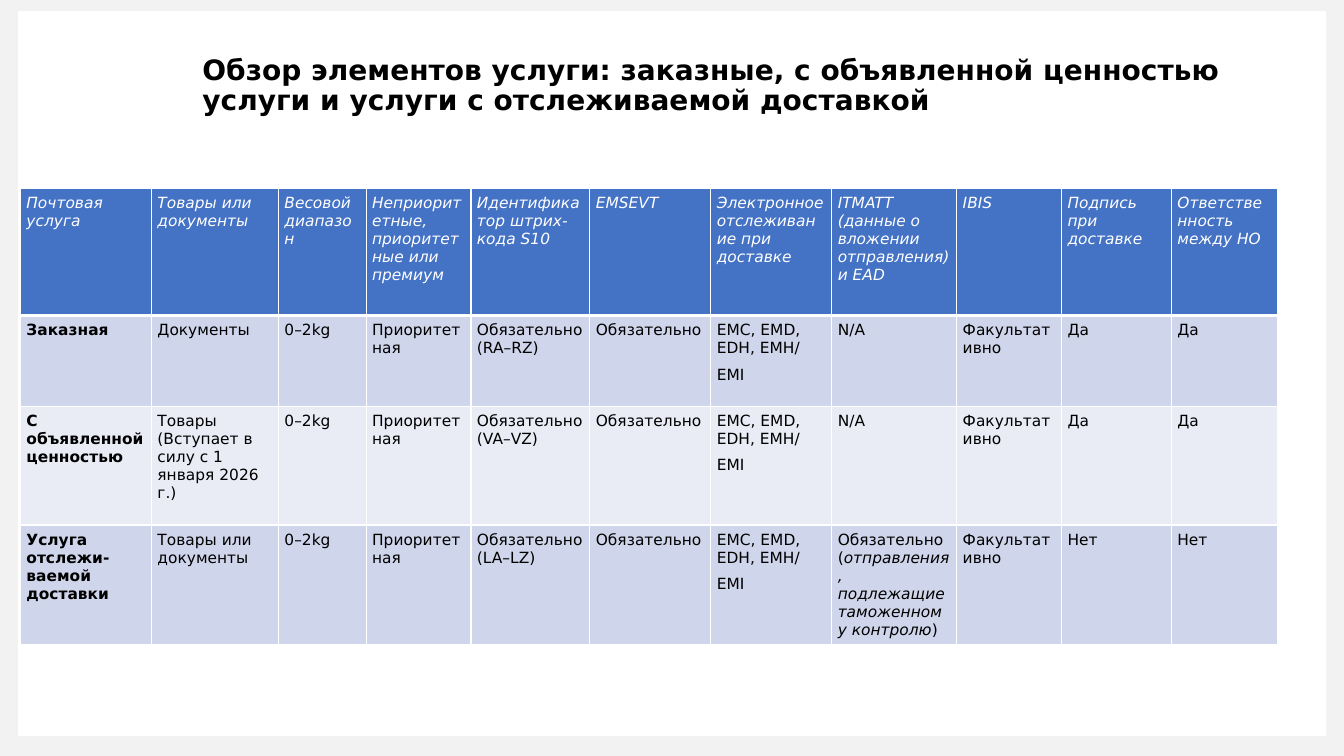
from lxml.etree import SubElement, Element
from pptx import Presentation
from pptx.dml.color import RGBColor
from pptx.enum.shapes import MSO_SHAPE as Shape
from pptx.enum.text import MSO_ANCHOR as Anchor
from pptx.oxml.ns import qn
from pptx.util import Pt

FONT = "DejaVu Sans"
WHITE, BLACK, FRAME = "FFFFFF", "000000", "F2F2F2"
HEADER_FILL, BAND_FILLS = "4472C4", ("CFD5EA", "E9EBF5")
INSET, SPACING = 4.3, 3
TITLE = ("Обзор элементов услуги: заказные, с объявленной ценностью "
         "услуги и услуги с отслеживаемой доставкой")
COLUMN_WIDTHS = (93.6, 90.72, 62.64, 74.88, 84.96, 86.4, 86.4, 89.28, 74.88, 78.48, 75.6)
ROW_HEIGHTS = (90.72, 64.8, 84.96, 84.96)
HEADINGS = (
    "Почтовая услуга", "Товары или документы", "Весовой диапазон",
    "Неприоритетные, приоритетные или премиум", "Идентификатор штрих-кода S10",
    "EMSEVT", "Электронное отслеживание при доставке",
    "ITMATT (данные о вложении отправления) и EAD", "IBIS",
    "Подпись при доставке", "Ответственность между НО",
)
CUSTOMS = "Обязательно (|отправления, подлежащие таможенному контролю|)"
SERVICES = (
    ("Заказная", "Документы", "RA–RZ", "N/A", "Да"),
    ("С объявленной ценностью", "Товары (Вступает в силу с 1 января 2026 г.)",
     "VA–VZ", "N/A", "Да"),
    ("Услуга отслежи-ваемой доставки", "Товары или документы", "LA–LZ", CUSTOMS, "Нет"),
)


def color(value):
    """Turn a hex string into a colour."""
    return RGBColor.from_string(value)


def service_row(name, contents, codes, customs_data, answer):
    """Give the cell texts of one service."""
    return (name, contents, "0–2kg", "Приоритетная", f"Обязательно ({codes})",
            "Обязательно", "EMC, EMD, EDH, EMH/\nEMI", customs_data,
            "Факультативно", answer, answer)


def format_run(run, size, hex_color, bold=False, italic=False):
    """Set the font of a run."""
    font = run.font
    font.name, font.size = FONT, Pt(size)
    font.bold, font.italic = bold, italic
    font.color.rgb = color(hex_color)


def add_panel(slide, left, top, width, height, fill):
    """Add a plain rectangle without outline."""
    panel = slide.shapes.add_shape(
        Shape.RECTANGLE, Pt(left), Pt(top), Pt(width), Pt(height))
    panel.shadow.inherit = False
    panel.fill.solid()
    panel.fill.fore_color.rgb = color(fill)
    panel.line.fill.background()


def add_title(slide, left, top, width, height):
    """Add the bold slide title."""
    text_frame = slide.shapes.add_textbox(
        Pt(left), Pt(top), Pt(width), Pt(height)).text_frame
    text_frame.word_wrap = True
    text_frame.vertical_anchor = Anchor.MIDDLE
    text_frame.text = TITLE
    paragraph = text_frame.paragraphs[0]
    paragraph.line_spacing = 0.9
    format_run(paragraph.runs[0], 20, BLACK, bold=True)


def set_borders(cell, bottom_width):
    """Draw white borders around a cell."""
    properties = cell._tc.get_or_add_tcPr()
    widths = {"a:lnL": 1, "a:lnR": 1, "a:lnT": 1, "a:lnB": bottom_width}
    for position, (tag, width) in enumerate(widths.items()):
        line = Element(qn(tag), w=str(Pt(width)))
        fill = SubElement(line, qn("a:solidFill"))
        SubElement(fill, qn("a:srgbClr"), val=WHITE)
        properties.insert(position, line)


def fill_cell(cell, text, fill, is_header, is_name):
    """Write one cell, with parts between bars in italics."""
    cell.fill.solid()
    cell.fill.fore_color.rgb = color(fill)
    set_borders(cell, 3 if is_header else 1)
    cell.margin_left = cell.margin_right = Pt(INSET)
    cell.margin_top = cell.margin_bottom = Pt(INSET)
    text_frame = cell.text_frame
    for number, line in enumerate(text.split("\n")):
        paragraph = text_frame.add_paragraph() if number else text_frame.paragraphs[0]
        paragraph.space_before = Pt(SPACING if number else 0)
        paragraph.space_after = Pt(SPACING)
        for part, words in enumerate(line.split("|")):
            run = paragraph.add_run()
            run.text = words
            format_run(run, 11, WHITE if is_header else BLACK,
                       bold=is_name, italic=is_header or part % 2 == 1)


def add_service_table(slide, left, top):
    """Add the table that compares the postal services."""
    rows = [HEADINGS] + [service_row(*service) for service in SERVICES]
    table = slide.shapes.add_table(
        len(rows), len(HEADINGS), Pt(left), Pt(top),
        Pt(sum(COLUMN_WIDTHS)), Pt(sum(ROW_HEIGHTS))).table
    table.first_row = table.horz_banding = False
    for column, width in zip(table.columns, COLUMN_WIDTHS):
        column.width = Pt(width)
    for row_number, (row, height) in enumerate(zip(rows, ROW_HEIGHTS)):
        table.rows[row_number].height = Pt(height)
        is_header = row_number == 0
        fill = HEADER_FILL if is_header else BAND_FILLS[(row_number - 1) % 2]
        for column_number, text in enumerate(row):
            fill_cell(table.cell(row_number, column_number), text, fill,
                      is_header, column_number == 0 and not is_header)


def main():
    """Build and save the presentation."""
    presentation = Presentation()
    presentation.slide_width, presentation.slide_height = Pt(960), Pt(540)
    slide = presentation.slides.add_slide(presentation.slide_layouts[6])
    add_panel(slide, 0, 0, 960, 540, FRAME)
    add_panel(slide, 12.96, 7.92, 934.3, 517.7, WHITE)
    add_service_table(slide, 14.6, 134.6)
    add_title(slide, 137.5, 38.9, 788.4, 45.4)
    presentation.save("out.pptx")


if __name__ == "__main__":
    main()
